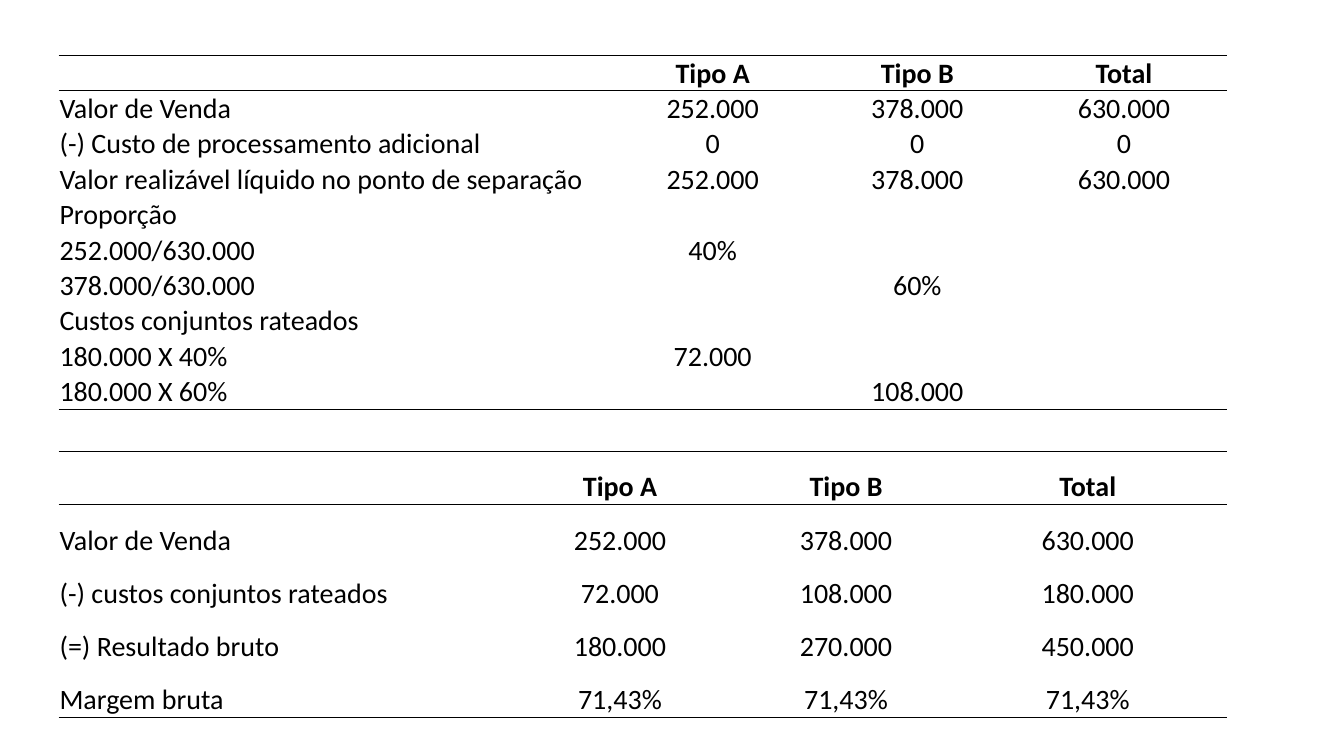
"""Build a slide with two cost allocation tables for products Tipo A and Tipo B."""
from lxml import etree
from pptx import Presentation
from pptx.dml.color import RGBColor
from pptx.enum import text
from pptx.oxml import ns
from pptx.util import Pt

THEME = {
    "font": "Calibri",
    "size": Pt(20),
    "ink": "000000",
    "rule": Pt(1),
    "plain_style": "{2D5ABB26-0587-4C30-8999-92F81FD0307C}",
}
CELL_FORMAT = {
    "margin_left": Pt(0.72),
    "margin_right": Pt(0.72),
    "margin_top": Pt(0.72),
    "margin_bottom": Pt(0),
    "vertical_anchor": text.MSO_ANCHOR.BOTTOM,
}
FONT_FORMAT = {"name": THEME["font"], "size": THEME["size"]}
LEFT = 41.8
HEADER = ["", "Tipo A", "Tipo B", "Total"]
SALES = ["Valor de Venda", "252.000", "378.000", "630.000"]

allocation = {
    "top": 39.5,
    "row_height": 25.3,
    "widths": [395.3, 144, 148.3, 147],
    "rows": [
        HEADER,
        SALES,
        ["(-) Custo de processamento adicional", "0", "0", "0"],
        ["Valor realizável líquido no ponto de separação", *SALES[1:]],
        ["Proporção", "", "", ""],
        ["252.000/630.000", "40%", "", ""],
        ["378.000/630.000", "", "60%", ""],
        ["Custos conjuntos rateados", "", "", ""],
        ["180.000 X 40%", "72.000", "", ""],
        ["180.000 X 60%", "", "108.000", ""],
    ],
}
margin = {
    "top": 322.4,
    "row_height": 38,
    "widths": [313, 176.2, 146.8, 198.6],
    "rows": [
        HEADER,
        SALES,
        ["(-) custos conjuntos rateados", "72.000", "108.000", "180.000"],
        ["(=) Resultado bruto", "180.000", "270.000", "450.000"],
        ["Margem bruta", "71,43%", "71,43%", "71,43%"],
    ],
}


def add_rule(cell, edge):
    """Draw a solid rule on one edge of a cell."""
    line = etree.SubElement(cell._tc.get_or_add_tcPr(), ns.qn(f"a:{edge}"), w=str(THEME["rule"]))
    fill = etree.SubElement(line, ns.qn("a:solidFill"))
    etree.SubElement(fill, ns.qn("a:srgbClr"), val=THEME["ink"])


deck = Presentation()
deck.slide_width, deck.slide_height = Pt(960), Pt(540)
slide = deck.slides.add_slide(deck.slide_layouts[6])

for statement in (allocation, margin):
    rows, widths = statement["rows"], statement["widths"]
    height = statement["row_height"]
    grid = slide.shapes.add_table(
        len(rows), len(widths), Pt(LEFT), Pt(statement["top"]),
        Pt(sum(widths)), Pt(height * len(rows)),
    ).table
    grid.first_row = grid.horz_banding = False
    grid._tbl.tblPr.find(ns.qn("a:tableStyleId")).text = THEME["plain_style"]
    for column, width in zip(grid.columns, widths):
        column.width = Pt(width)

    for r, values in enumerate(rows):
        grid.rows[r].height = Pt(height)
        for c, value in enumerate(values):
            cell = grid.cell(r, c)
            for name, setting in CELL_FORMAT.items():
                setattr(cell, name, setting)
            if r == 0:
                add_rule(cell, "lnT")
            if r in (0, len(rows) - 1):
                add_rule(cell, "lnB")
            cell.fill.background()
            if not value:
                continue
            entry = cell.text_frame.paragraphs[0]
            entry.alignment = text.PP_ALIGN.CENTER if c else text.PP_ALIGN.LEFT
            figure = entry.add_run()
            figure.text = value
            for name, setting in FONT_FORMAT.items():
                setattr(figure.font, name, setting)
            figure.font.bold = r == 0
            figure.font.color.rgb = RGBColor.from_string(THEME["ink"])

deck.save("out.pptx")
